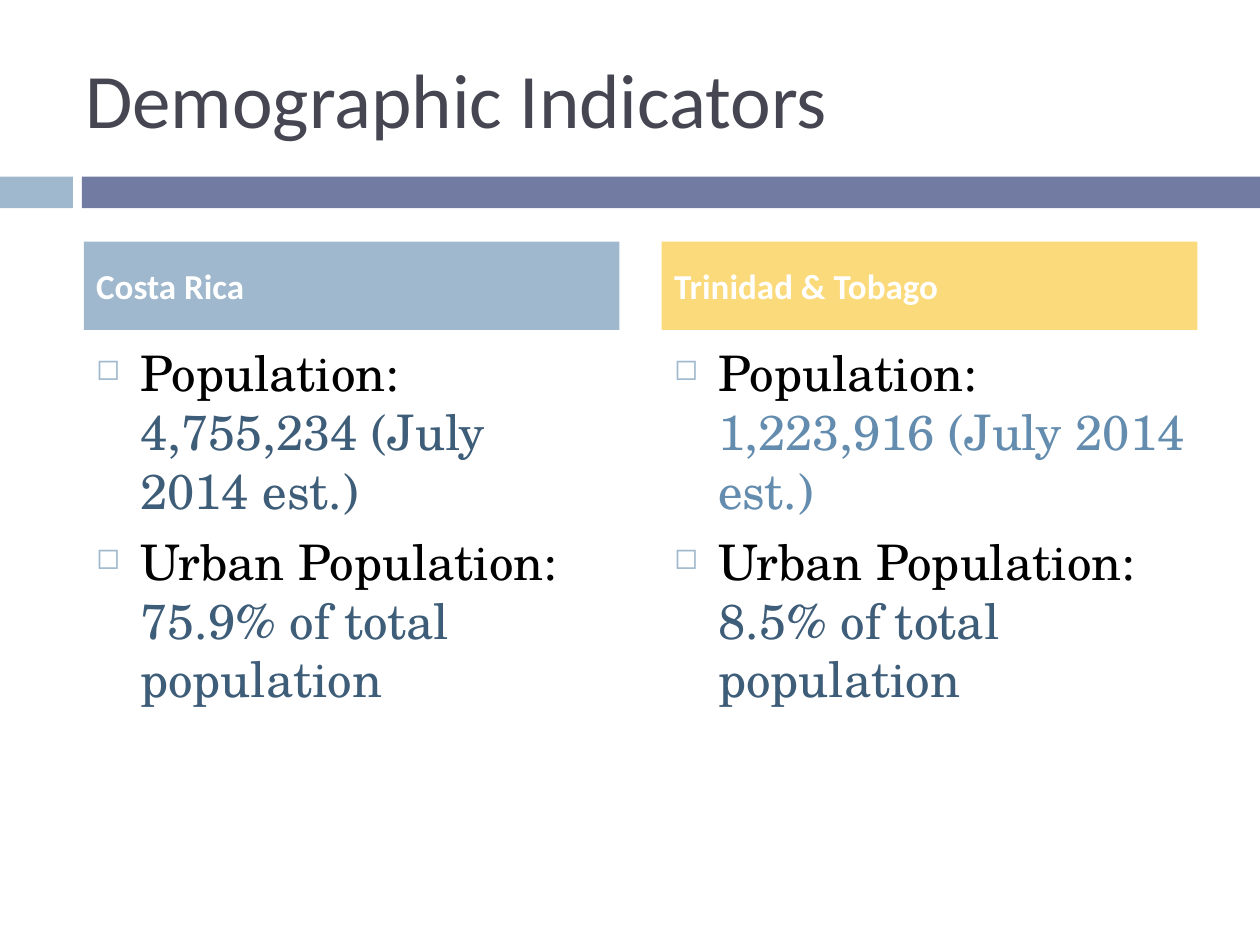
from dataclasses import dataclass

from lxml.etree import SubElement
from pptx import Presentation
from pptx.dml.color import RGBColor
from pptx.enum.shapes import MSO_SHAPE
from pptx.enum.text import MSO_ANCHOR, PP_ALIGN
from pptx.oxml.ns import qn
from pptx.util import Cm, Pt


@dataclass(frozen=True)
class Theme:
    heading_font: str = "Calibri"
    body_font: str = "TeX Gyre Schola"
    title_size: int = 44
    header_size: int = 20
    body_size: int = 28
    title: str = "464653"
    label: str = "000000"
    dark_value: str = "3E5D78"
    light_value: str = "638CAE"
    white: str = "FFFFFF"
    sky: str = "9FB8CD"
    slate: str = "727CA3"
    gold: str = "FADA7A"


def add_text(paragraph, text, *, font, size, color, bold=False):
    run = paragraph.add_run()
    run.text = text
    run.font.name = font
    run.font.size = Pt(size)
    run.font.bold = bold
    run.font.color.rgb = RGBColor.from_string(color)


class SlideBuilder:
    def __init__(self, slide, theme):
        self.slide = slide
        self.theme = theme

    def bar(self, left, top, width, height, color):
        bar = self.slide.shapes.add_shape(
            MSO_SHAPE.RECTANGLE, Cm(left), Cm(top), Cm(width), Cm(height))
        bar.shadow.inherit = False
        bar.fill.solid()
        bar.fill.fore_color.rgb = RGBColor.from_string(color)
        bar.line.fill.background()
        return bar

    def text_box(self, left, top, width, height, anchor):
        frame = self.slide.shapes.add_textbox(
            Cm(left), Cm(top), Cm(width), Cm(height)).text_frame
        frame.word_wrap = True
        frame.vertical_anchor = anchor
        return frame

    def title(self, text, left, top, width, height):
        frame = self.text_box(left, top, width, height, MSO_ANCHOR.MIDDLE)
        add_text(frame.paragraphs[0], text, font=self.theme.heading_font,
                 size=self.theme.title_size, color=self.theme.title)

    def header(self, text, left, top, width, height, color):
        frame = self.bar(left, top, width, height, color).text_frame
        frame.word_wrap = True
        frame.vertical_anchor = MSO_ANCHOR.MIDDLE
        heading = frame.paragraphs[0]
        heading.alignment = PP_ALIGN.LEFT
        heading.space_before = Pt(7)
        add_text(heading, text, font=self.theme.heading_font,
                 size=self.theme.header_size, color=self.theme.white, bold=True)

    def bullet(self, paragraph):
        paragraph.space_before = Pt(7)
        properties = paragraph._p.get_or_add_pPr()
        properties.set("marL", str(Cm(0.89)))
        properties.set("indent", str(-Cm(0.89)))
        color = SubElement(properties, qn("a:buClr"))
        SubElement(color, qn("a:srgbClr"), val=self.theme.sky)
        SubElement(properties, qn("a:buSzPct"), val="60000")
        SubElement(properties, qn("a:buChar"), char="◻")

    def indicators(self, facts, left, top, width, height):
        frame = self.text_box(left, top, width, height, MSO_ANCHOR.TOP)
        for index, (label, value, value_color) in enumerate(facts):
            fact = frame.add_paragraph() if index else frame.paragraphs[0]
            self.bullet(fact)
            for text, color in ((label, self.theme.label), (value, value_color)):
                add_text(fact, text, font=self.theme.body_font,
                         size=self.theme.body_size, color=color)


def main():
    theme = Theme()
    presentation = Presentation()
    presentation.slide_width = Cm(25.4)
    presentation.slide_height = Cm(19.05)
    slide = presentation.slides.add_slide(presentation.slide_layouts[6])
    builder = SlideBuilder(slide, theme)

    builder.bar(0, 3.56, 1.47, 0.64, theme.sky)
    builder.bar(1.65, 3.56, 23.75, 0.64, theme.slate)
    builder.title("Demographic Indicators", 1.47, 0.76, 22.66, 2.41)

    countries = [
        ("Costa Rica", theme.sky, [
            ("Population: ", "4,755,234 (July 2014 est.)", theme.dark_value),
            ("Urban Population: ", "75.9% of total population", theme.dark_value),
        ]),
        ("Trinidad & Tobago", theme.gold, [
            ("Population: ", "1,223,916 (July 2014 est.)", theme.light_value),
            ("Urban Population: ", "8.5% of total population", theme.dark_value),
        ]),
    ]
    first_left, column_width, gap = 1.69, 10.8, 0.85
    for column, (country, color, facts) in enumerate(countries):
        left = first_left + column * (column_width + gap)
        builder.header(country, left, 4.87, column_width, 1.78, color)
        builder.indicators(facts, left, 6.78, column_width, 9.96)

    presentation.save("out.pptx")


if __name__ == "__main__":
    main()
